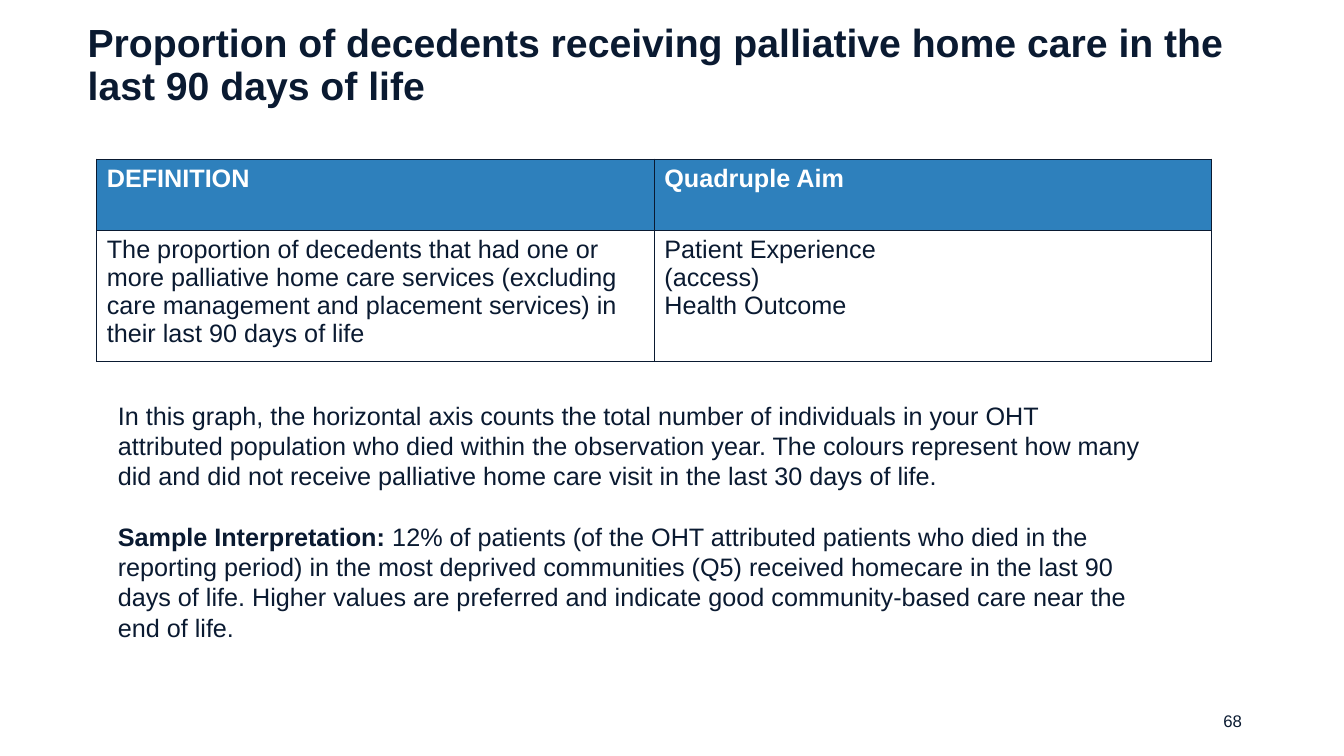
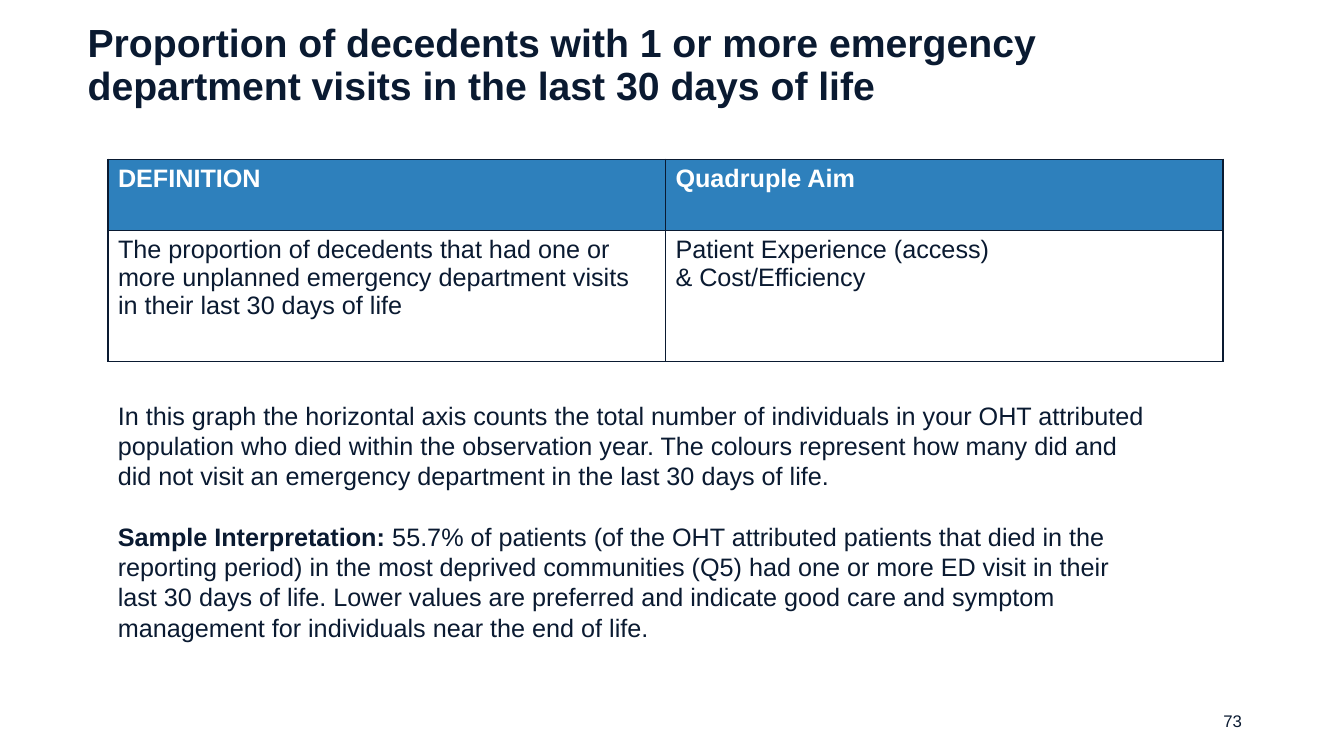
from lxml import etree
from pptx import Presentation
from pptx.dml.color import RGBColor
from pptx.enum import text
from pptx.oxml import ns
from pptx.util import Cm, Pt

NAVY = RGBColor(0x0A, 0x1A, 0x31)
BLUE = RGBColor(0x2E, 0x80, 0xBC)
WHITE = RGBColor(0xFF, 0xFF, 0xFF)
FONT = "Arial"
HEADERS = ("DEFINITION", "Quadruple Aim")
ROW_HEIGHTS = (Cm(1.79), Cm(3.3))

SLIDES = [
    {
        "number": "68",
        "title": "Proportion of decedents receiving palliative home care in the last 90 days of life",
        "table_left": Cm(2.44),
        "definition": "The proportion of decedents that had one or more palliative home care services "
                      "(excluding care management and placement services) in their last 90 days of life",
        "aims": "Patient Experience \v(access)\nHealth Outcome",
        "reading": "In this graph, the horizontal axis counts the total number of individuals in "
                   "your OHT attributed population who died within the observation year. "
                   "The colours represent how many did and did not receive palliative home care "
                   "visit in the last 30 days of life.",
        "sample": "12% of patients (of the OHT attributed patients who died in the reporting period) "
                  "in the most deprived communities (Q5) received homecare in the last 90 days of life. "
                  "Higher values are preferred and indicate good community-based care near the end of life.",
    },
    {
        "number": "73",
        "title": "Proportion of decedents with 1 or more emergency department visits in the last 30 days of life",
        "table_left": Cm(2.72),
        "definition": "The proportion of decedents that had one or more unplanned emergency department "
                      "visits in their last 30 days of life",
        "aims": "Patient Experience (access)\n& Cost/Efficiency",
        "reading": "In this graph the horizontal axis counts the total number of individuals in your "
                   "OHT attributed population who died within the observation year. The colours "
                   "represent how many did and did not visit an emergency department in the last "
                   "30 days of life.",
        "sample": "55.7% of patients (of the OHT attributed patients that died in the reporting period) "
                  "in the most deprived communities (Q5) had one or more ED visit in their last 30 days "
                  "of life. Lower values are preferred and indicate good care and symptom management "
                  "for individuals near the end of life.",
    },
]


def style(p, size, color=NAVY, bold=None):
    """Set the font of a paragraph."""
    p.font.name, p.font.size, p.font.bold = FONT, Pt(size), bold
    p.font.color.rgb = color


def add_text(s, box, anchor=text.MSO_ANCHOR.MIDDLE):
    """Add a wrapping text box and return its text frame."""
    tf = s.shapes.add_textbox(*box).text_frame
    tf.word_wrap = True
    tf.vertical_anchor = anchor
    return tf


def add_title(s, box, title):
    """Add the bold slide title."""
    p = add_text(s, box).paragraphs[0]
    p.text = title
    p.line_spacing = 0.9
    style(p, 28, bold=True)


def add_number(s, box, number):
    """Add the slide number at the right of its box."""
    p = add_text(s, box).paragraphs[0]
    p.text = number
    p.alignment = text.PP_ALIGN.RIGHT
    style(p, 12)


def set_borders(cell):
    """Draw a thin navy line on each side of a cell."""
    pr = cell._tc.get_or_add_tcPr()
    for i, side in enumerate(("lnL", "lnR", "lnT", "lnB")):
        ln = etree.Element(ns.qn(f"a:{side}"), w=str(Pt(1)))
        fill = etree.SubElement(ln, ns.qn("a:solidFill"))
        etree.SubElement(fill, ns.qn("a:srgbClr"), val=str(NAVY))
        pr.insert(i, ln)


def add_definition_table(s, box, rows):
    """Add a table with a blue header row and bordered cells."""
    table = s.shapes.add_table(len(rows), len(rows[0]), *box).table
    for i, row in enumerate(rows):
        table.rows[i].height = ROW_HEIGHTS[i]
        for j, words in enumerate(row):
            cell = table.cell(i, j)
            cell.text = words
            cell.fill.solid()
            cell.fill.fore_color.rgb = WHITE if i else BLUE
            for p in cell.text_frame.paragraphs:
                style(p, 18, NAVY if i else WHITE, bold=not i)
            set_borders(cell)


def add_explanation(s, box, reading, sample):
    """Add the reading guide and the sample interpretation."""
    tf = add_text(s, box, text.MSO_ANCHOR.TOP)
    p = tf.paragraphs[0]
    p.text = reading
    style(p, 18)
    p = tf.add_paragraph()
    p.space_before = Pt(21.6)
    style(p, 18)
    r = p.add_run()
    r.text = "Sample Interpretation: "
    r.font.bold = True
    p.add_run().text = sample


def add_indicator_slide(prs, d):
    """Add one indicator slide from its content."""
    s = prs.slides.add_slide(prs.slide_layouts[6])
    add_number(s, (Cm(23.93), Cm(17.65), Cm(7.62), Cm(1.02)), d["number"])
    add_title(s, (Cm(1.96), Cm(0.61), Cm(29.97), Cm(2.13)), d["title"])
    add_definition_table(s, (d["table_left"], Cm(4.01), Cm(28.1), sum(ROW_HEIGHTS)),
                         (HEADERS, (d["definition"], d["aims"])))
    add_explanation(s, (Cm(2.72), Cm(9.96), Cm(26.45), Cm(6.4)), d["reading"], d["sample"])


def main():
    """Build and save the presentation."""
    prs = Presentation()
    prs.slide_width, prs.slide_height = Cm(33.87), Cm(19.05)
    for d in SLIDES:
        add_indicator_slide(prs, d)
    prs.save("out.pptx")


if __name__ == "__main__":
    main()
